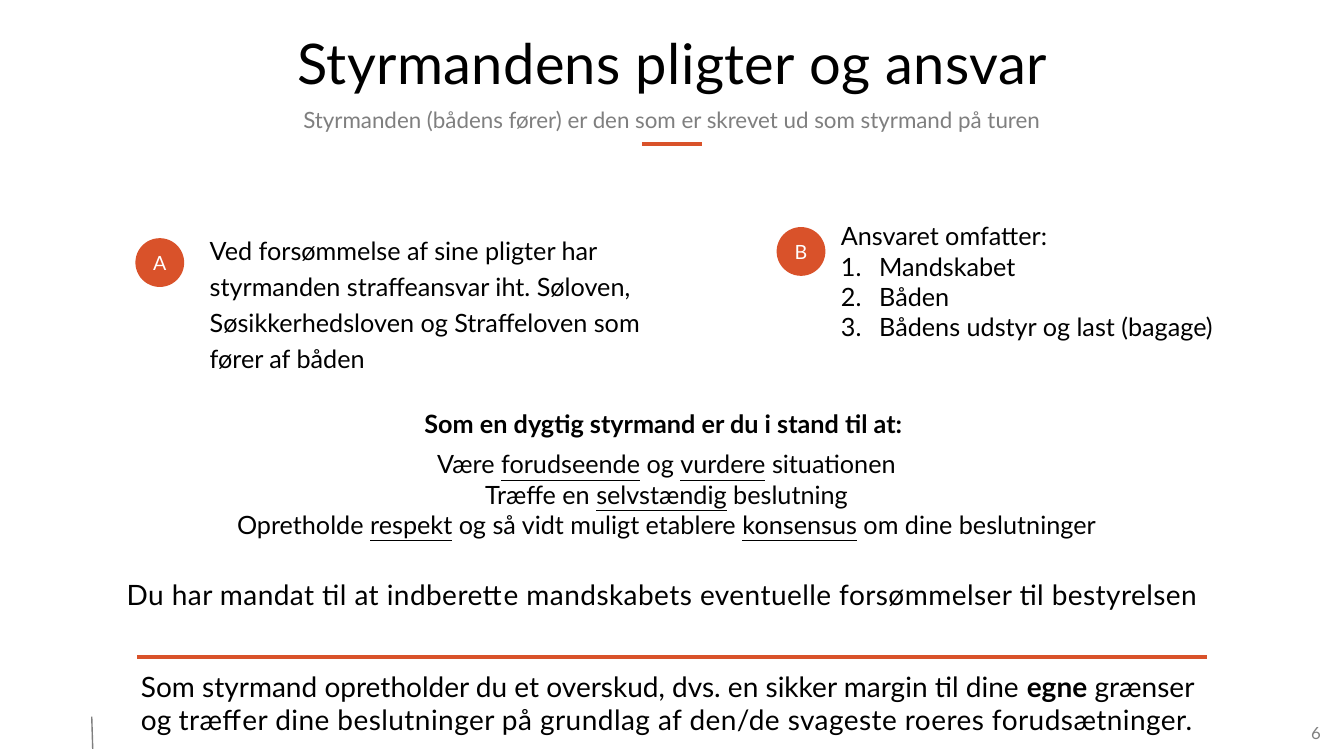
from lxml import etree
from pptx import Presentation
from pptx import util as u
from pptx.dml.color import RGBColor
from pptx.enum import shapes, text
from pptx.oxml.ns import qn

BLACK = RGBColor(0x00, 0x00, 0x00)
GREY = RGBColor(0x7F, 0x7F, 0x7F)
ORANGE = RGBColor(0xD9, 0x52, 0x2A)
WHITE = RGBColor(0xFF, 0xFF, 0xFF)

LEFT, CENTER, RIGHT = text.PP_ALIGN.LEFT, text.PP_ALIGN.CENTER, text.PP_ALIGN.RIGHT
BOLD = {"bold": True}
UNDERLINE = {"underline": True}
SPACED = {"spacing": 0.3}
NO_INSET = (0, 0)
INSET = (0.1, 0.05)


def set_insets(frame, inset):
    across, down = (u.Inches(value) for value in inset)
    frame.margin_left = frame.margin_right = across
    frame.margin_top = frame.margin_bottom = down


def add_span(para, words, size, color, styles):
    span = para.add_run()
    span.text = words
    styles = dict(styles)
    spacing = styles.pop("spacing", None)
    for name, value in {"name": "Lato", "size": u.Pt(size), **styles}.items():
        setattr(span.font, name, value)
    span.font.color.rgb = color
    if spacing:
        span._r.get_or_add_rPr().set("spc", str(round(spacing * 100)))


def add_text(slide, at, paragraphs, size, color=BLACK, align=CENTER,
             inset=INSET, line_spacing=None):
    """Add a text box; each paragraph is a list of (words, styles) spans."""
    box = slide.shapes.add_textbox(*(u.Inches(value) for value in at))
    frame = box.text_frame
    frame.word_wrap = True
    frame.auto_size = text.MSO_AUTO_SIZE.SHAPE_TO_FIT_TEXT
    set_insets(frame, inset)
    for index, spans in enumerate(paragraphs):
        para = frame.add_paragraph() if index else frame.paragraphs[0]
        para.alignment = align
        if line_spacing:
            para.line_spacing = line_spacing
        for words, styles in spans:
            add_span(para, words, size, color, styles)
    return frame


def number_paragraph(para):
    properties = para._p.get_or_add_pPr()
    properties.set("marL", str(u.Inches(0.38)))
    properties.set("indent", str(-u.Inches(0.38)))
    etree.SubElement(properties, qn("a:buFont"), typeface="+mj-lt")
    etree.SubElement(properties, qn("a:buAutoNum"), type="arabicPeriod")


def add_badge(slide, left, top, letter):
    side = u.Inches(0.47)
    badge = slide.shapes.add_shape(
        shapes.MSO_SHAPE.OVAL, u.Inches(left), u.Inches(top), side, side)
    badge.shadow.inherit = False
    badge.fill.solid()
    badge.fill.fore_color.rgb = badge.line.color.rgb = ORANGE
    badge.line.width = u.Pt(1)
    frame = badge.text_frame
    set_insets(frame, NO_INSET)
    frame.vertical_anchor = text.MSO_ANCHOR.MIDDLE
    frame.paragraphs[0].alignment = CENTER
    add_span(frame.paragraphs[0], letter, 14, WHITE, {})


def add_rule(slide, start, end, color, width):
    rule = slide.shapes.add_connector(
        shapes.MSO_CONNECTOR.STRAIGHT,
        *(u.Inches(value) for value in (*start, *end)))
    rule.line.color.rgb = color
    rule.line.width = u.Pt(width)
    etree.SubElement(rule._element.spPr, qn("a:effectLst"))


def add_footer(slide):
    add_rule(slide, (0.91, 7.11), (0.92, 7.43), GREY, 1)
    add_text(slide, (12.72, 7.17, 0.38, 0.2), [[("6", {})]], 12, GREY, RIGHT, NO_INSET)


def add_heading(slide):
    add_text(slide, (0.61, 0.31, 12.12, 0.71),
             [[("Styrmandens pligter og ansvar", SPACED)]], 40, line_spacing=0.9)
    subtitle = "Styrmanden (bådens fører) er den som er skrevet ud som styrmand på turen"
    add_text(slide, (0.61, 0.9, 12.11, 0.44), [[(subtitle, {})]], 16, GREY,
             line_spacing=1.4)
    add_rule(slide, (6.37, 1.43), (6.96, 1.43), ORANGE, 3)


def add_liability(slide):
    liability = ("Ved forsømmelse af sine pligter har styrmanden straffeansvar iht. "
                 "Søloven, Søsikkerhedsloven og Straffeloven som fører af båden")
    add_text(slide, (2.08, 2.27, 4.59, 1.43), [[(liability, {})]], 18,
             align=LEFT, inset=NO_INSET, line_spacing=1.2)
    add_badge(slide, 1.35, 2.37, "A")


def add_scope(slide):
    lines = ["Ansvaret omfatter:", "Mandskabet", "Båden",
             "Bådens udstyr og last (bagage)"]
    frame = add_text(slide, (8.34, 2.19, 3.71, 1.21),
                     [[(line, {})] for line in lines], 18, align=LEFT, inset=NO_INSET)
    for para in frame.paragraphs[1:]:
        number_paragraph(para)
    add_badge(slide, 7.71, 2.26, "B")


def add_skills(slide):
    skills = [
        [("Som en dygtig styrmand er du i stand til at: ", BOLD)],
        [("Være ", {}), ("forudseende", UNDERLINE), (" og ", {}),
         ("vurdere", UNDERLINE), (" situationen", {})],
        [("Træffe en ", {}), ("selvstændig", UNDERLINE), (" beslutning", {})],
        [("Opretholde ", {}), ("respekt", UNDERLINE),
         (" og så vidt muligt etablere ", {}), ("konsensus", UNDERLINE),
         (" om dine beslutninger", {})],
    ]
    frame = add_text(slide, (0.72, 4.05, 11.78, 1.31), skills, 18, inset=NO_INSET)
    frame.paragraphs[0].space_after = u.Pt(7.2)


def add_conclusion(slide):
    mandate = ("Du har mandat til at indberette mandskabets eventuelle "
               "forsømmelser til bestyrelsen ")
    add_text(slide, (0.81, 5.68, 11.6, 0.44), [[(mandate, SPACED)]], 20)
    add_rule(slide, (1.36, 6.52), (11.97, 6.52), ORANGE, 3)
    margin = [
        ("Som styrmand opretholder du et overskud, dvs. en sikker margin til dine ", {}),
        ("egne", BOLD),
        (" grænser og ", {}),
        ("træffer dine beslutninger på grundlag af den/de svageste roeres "
         "forudsætninger.", SPACED),
    ]
    add_text(slide, (1.27, 6.59, 10.7, 0.77), [margin], 20)


def main():
    deck = Presentation()
    deck.slide_width, deck.slide_height = u.Inches(13.33), u.Inches(7.5)
    slide = deck.slides.add_slide(deck.slide_layouts[6])
    for add_part in (add_footer, add_skills, add_liability, add_scope,
                     add_conclusion, add_heading):
        add_part(slide)
    deck.save("out.pptx")


if __name__ == "__main__":
    main()
